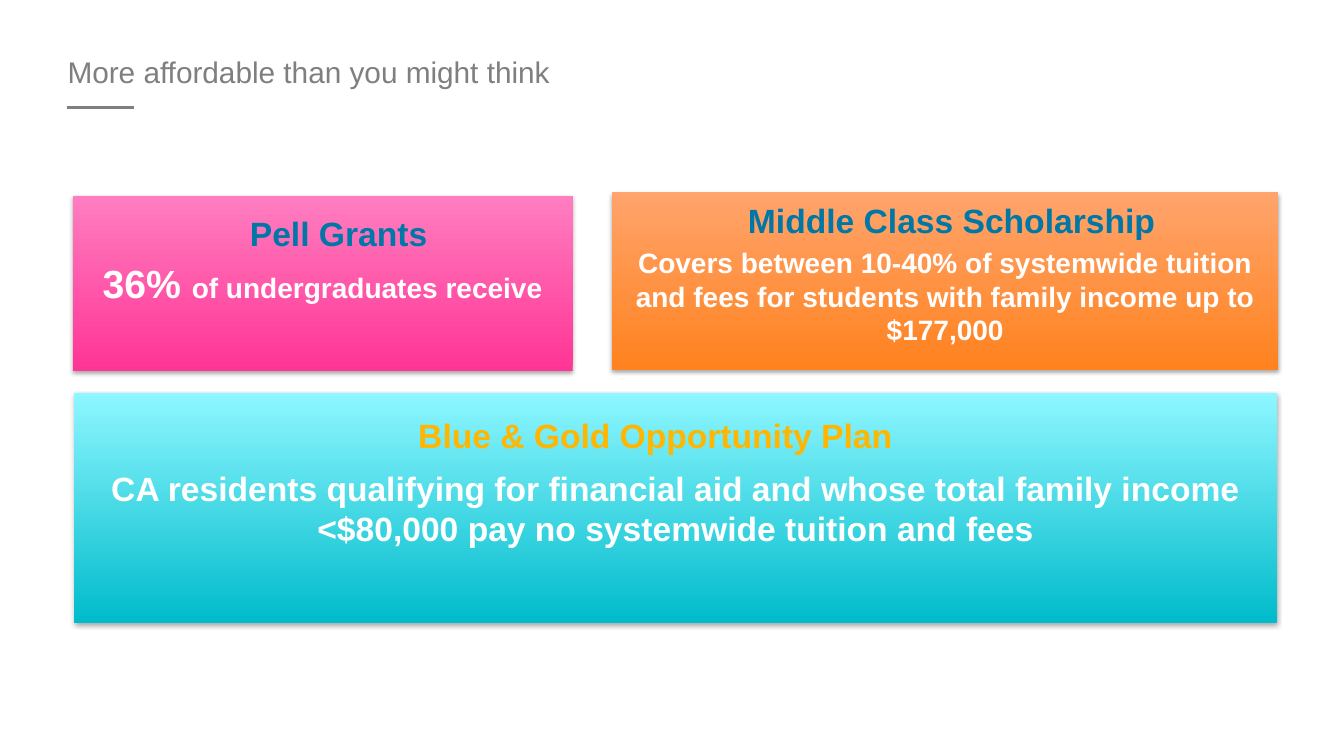
import pptx
import pptx.util
import pptx.dml.color
import pptx.enum.shapes
import pptx.enum.text
import pptx.oxml
import pptx.oxml.ns

Inches = pptx.util.Inches
Pt = pptx.util.Pt

COLORS = {
    "gray": "7F7F7F", "white": "FFFFFF", "blue": "0078A7", "gold": "FFB602",
    "pink": "FF3595", "light pink": "FF7DC0",
    "cyan": "00BBCC", "light cyan": "8EF7FF",
    "orange": "FF821E", "light orange": "FFA46C",
}
TITLE = "More affordable than you might think"
CARDS = [
    {"area": (0.72, 1.94, 4.96, 1.74), "fill": "pink", "top_inset": 0.05,
     "body": [("36% ", 28), ("of undergraduates receive", 20)],
     "heading": "Pell Grants", "heading_color": "blue",
     "heading_area": (2.38, 2.06, 1.98, 0.5)},
    {"area": (0.73, 3.9, 11.94, 2.28), "fill": "cyan", "top_inset": 0.05,
     "body": [("CA residents qualifying for financial aid and whose total family "
               "income <$80,000 pay no systemwide tuition and fees", 24)],
     "heading": "Blue & Gold Opportunity Plan", "heading_color": "gold",
     "heading_area": (4.05, 4.07, 4.94, 0.5)},
    {"area": (6.07, 1.91, 6.61, 1.76), "fill": "orange", "top_inset": 0.34,
     "body": [("Covers between 10-40% of systemwide tuition and fees for students "
               "with family income up to $177,000", 20)],
     "heading": "Middle Class Scholarship", "heading_color": "blue",
     "heading_area": (7.32, 1.93, 4.28, 0.5)},
]
SHADOW = (
    f'<a:outerShdw {pptx.oxml.ns.nsdecls("a")} blurRad="{Pt(3.1)}" dist="{Pt(1.8)}" '
    'dir="5400000" rotWithShape="0"><a:srgbClr val="000000">'
    '<a:alpha val="35000"/></a:srgbClr></a:outerShdw>'
)


def rgb(name):
    return pptx.dml.color.RGBColor.from_string(COLORS[name])


def add_span(para, text, size, color="white", bold=True):
    span = para.add_run()
    span.text = text
    span.font.name = "Arial"
    span.font.size = Pt(size)
    span.font.bold = bold
    span.font.color.rgb = rgb(color)


def add_label(page, area, text, **style):
    box = page.shapes.add_textbox(*map(Inches, area))
    box.text_frame.word_wrap = True
    add_span(box.text_frame.paragraphs[0], text, **style)
    return box


def add_card(page, card):
    box = page.shapes.add_shape(
        pptx.enum.shapes.MSO_SHAPE.RECTANGLE, *map(Inches, card["area"]))
    box.line.fill.background()
    box.fill.gradient()
    box.fill.gradient_angle = 90
    shades = (card["fill"], "light " + card["fill"])
    for position, (stop, shade) in enumerate(zip(box.fill.gradient_stops, shades)):
        stop.position = position
        stop.color.rgb = rgb(shade)
    box.shadow.inherit = False
    effects = box._element.spPr.find(pptx.oxml.ns.qn("a:effectLst"))
    effects.append(pptx.oxml.parse_xml(SHADOW))
    frame = box.text_frame
    frame.word_wrap = True
    frame.margin_top = Inches(card["top_inset"])
    frame.vertical_anchor = pptx.enum.text.MSO_ANCHOR.MIDDLE
    para = frame.paragraphs[0]
    para.alignment = pptx.enum.text.PP_ALIGN.CENTER
    for text, size in card["body"]:
        add_span(para, text, size)
    add_label(page, card["heading_area"], card["heading"],
              size=24, color=card["heading_color"])


def main():
    deck = pptx.Presentation()
    deck.slide_width, deck.slide_height = Inches(13.33), Inches(7.5)
    page = deck.slides.add_slide(deck.slide_layouts[6])

    rule = page.shapes.add_connector(
        pptx.enum.shapes.MSO_CONNECTOR.STRAIGHT,
        Inches(0.66), Inches(1.07), Inches(1.33), Inches(1.07))
    rule.line.color.rgb = rgb("gray")
    rule.line.width = Pt(2)
    rule._element.spPr.append(pptx.oxml.parse_xml(
        f'<a:effectLst {pptx.oxml.ns.nsdecls("a")}/>'))

    title = add_label(page, (0.67, 0.53, 12, 0.36), TITLE,
                      size=21.3, color="gray", bold=False)
    frame = title.text_frame
    frame.margin_left = frame.margin_right = frame.margin_top = frame.margin_bottom = 0

    for card in CARDS:
        add_card(page, card)
    deck.save("out.pptx")


if __name__ == "__main__":
    main()
